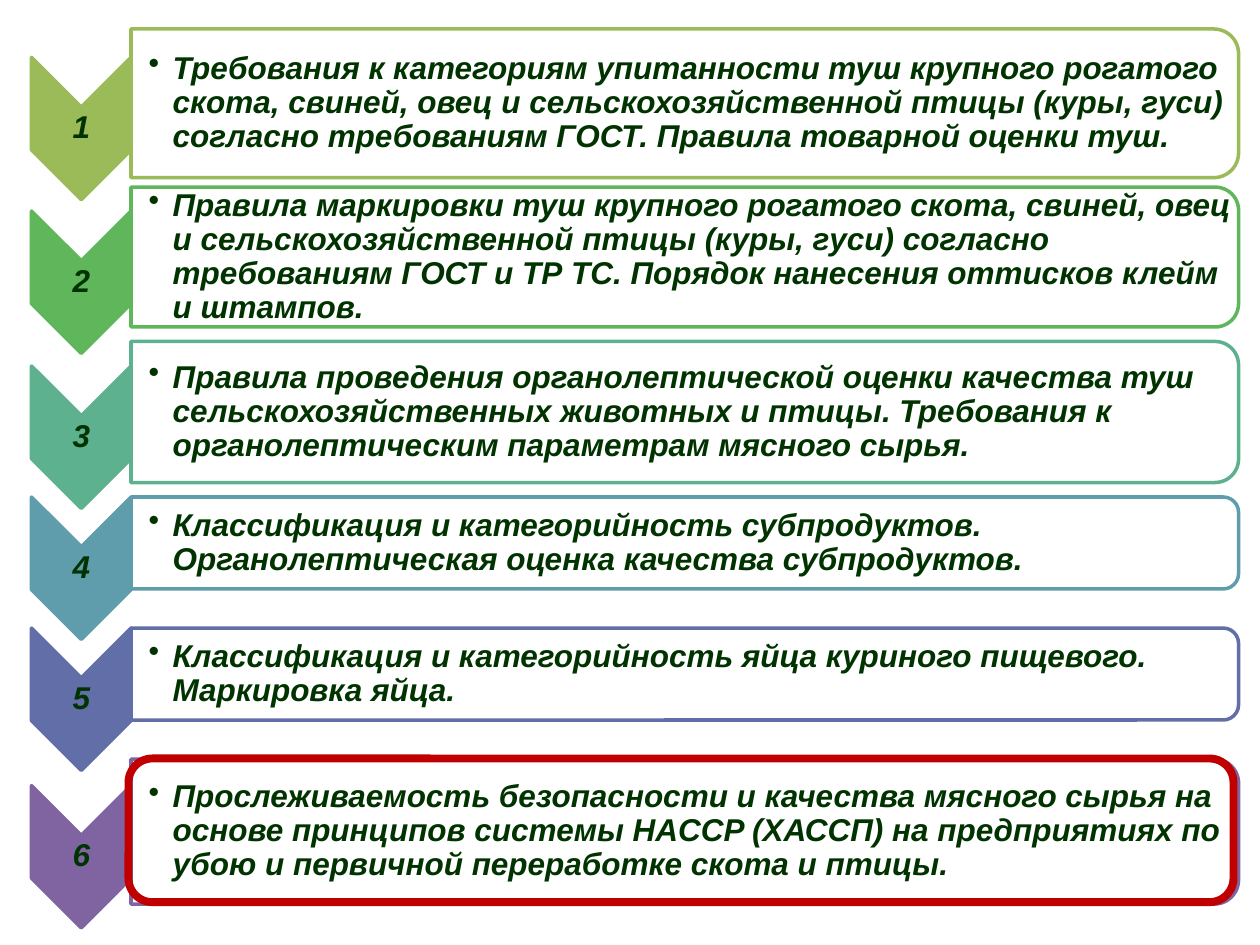
from lxml import etree
from pptx import Presentation
from pptx.dml.color import RGBColor
from pptx.enum.shapes import MSO_SHAPE as SHAPE
from pptx.enum.text import MSO_ANCHOR, PP_ALIGN
from pptx.oxml.ns import qn
from pptx.util import Inches, Pt

TOPICS = [
    ("Требования к категориям упитанности туш крупного рогатого скота, свиней, овец и "
     "сельскохозяйственной птицы (куры, гуси) согласно требованиям ГОСТ. "
     "Правила товарной оценки туш.", "9BBB59", 0.82, 1.18),
    ("Правила маркировки туш крупного рогатого скота, свиней, овец и "
     "сельскохозяйственной птицы (куры, гуси) согласно требованиям ГОСТ и ТР ТС. "
     "Порядок нанесения оттисков клейм и штампов.", "5FB65B", 2.04, 1.11),
    ("Правила проведения органолептической оценки качества туш сельскохозяйственных "
     "животных и птицы. Требования к органолептическим параметрам мясного сырья.",
     "5DB18E", 3.27, 1.12),
    ("Классификация и категорийность субпродуктов. "
     "Органолептическая оценка качества субпродуктов.", "5F9DAC", 4.31, 0.73),
    ("Классификация и категорийность яйца куриного пищевого. Маркировка яйца.",
     "626EA7", 5.35, 0.73),
    ("Прослеживаемость безопасности и качества мясного сырья на основе принципов "
     "системы HACCP (ХАССП) на предприятиях по убою и первичной переработке скота "
     "и птицы.", "8064A2", 6.6, 1.15),
]
TEXT_COLOR = "003300"
CHEVRON_LEFT, CHEVRON_W, CHEVRON_H = 0.25, 0.79, 1.13
CHEVRON_DROP = 0.2
BOX_LEFT, BOX_W = CHEVRON_LEFT + CHEVRON_W, 8.79


def rgb(color):
    return RGBColor.from_string(color)


def add_outline(s, kind, left, top, w, h, line, width):
    sp = s.shapes.add_shape(kind, Inches(left), Inches(top), Inches(w), Inches(h))
    sp.shadow.inherit = False
    sp.fill.background()
    sp.line.color.rgb = rgb(line)
    sp.line.width = Pt(width)
    return sp


def add_turned(s, kind, left, center, w, h, fill, line):
    sp = add_outline(s, kind, left + (w - h) / 2, center - w / 2, h, w, line, 2)
    sp.rotation = 90
    sp.fill.solid()
    sp.fill.fore_color.rgb = rgb(fill)
    return sp


def add_label(s, text, left, center, w, h, inset=0.01):
    sp = s.shapes.add_textbox(Inches(left), Inches(center - h / 2), Inches(w), Inches(h))
    tf = sp.text_frame
    tf.word_wrap = True
    tf.vertical_anchor = MSO_ANCHOR.MIDDLE
    tf.margin_left = Inches(inset)
    tf.margin_top = tf.margin_right = tf.margin_bottom = Inches(0.01)
    p = tf.paragraphs[0]
    p.text = text
    p.line_spacing = 0.9
    p.font.name, p.font.size = "Arial", Pt(18)
    p.font.bold = p.font.italic = True
    p.font.color.rgb = rgb(TEXT_COLOR)
    return p


def add_bullet(p):
    pPr = p._p.get_or_add_pPr()
    pPr.set("marL", str(Inches(0.19)))
    pPr.set("indent", str(Inches(-0.19)))
    bullet = etree.Element(qn("a:buChar"), char="•")
    pPr.find(qn("a:defRPr")).addprevious(bullet)


def set_alpha(sp, percent):
    color = sp.fill._xPr.find(qn("a:solidFill"))[0]
    etree.SubElement(color, qn("a:alpha"), val=str(percent * 1000))


def add_topic(s, number, text, color, center, h):
    low = center + CHEVRON_DROP
    add_turned(s, SHAPE.CHEVRON, CHEVRON_LEFT, low, CHEVRON_W, CHEVRON_H, color, color)
    p = add_label(s, str(number), CHEVRON_LEFT, low, CHEVRON_W, 0.34)
    p.alignment = PP_ALIGN.CENTER
    box = add_turned(s, SHAPE.ROUND_2_SAME_RECTANGLE, BOX_LEFT, center, BOX_W, h,
                     "FFFFFF", color)
    set_alpha(box, 90)
    add_bullet(add_label(s, text, BOX_LEFT, center, BOX_W - 0.04 * h, 0.91 * h, 0.14))


def main():
    prs = Presentation()
    prs.slide_width, prs.slide_height = Inches(10), Inches(7.5)
    s = prs.slides.add_slide(prs.slide_layouts[6])
    for number, topic in enumerate(TOPICS, 1):
        add_topic(s, number, *topic)
    add_outline(s, SHAPE.ROUNDED_RECTANGLE, 1.02, 6.02, 8.77, 1.14, "C00000", 4.5)
    prs.save("out.pptx")


if __name__ == "__main__":
    main()
